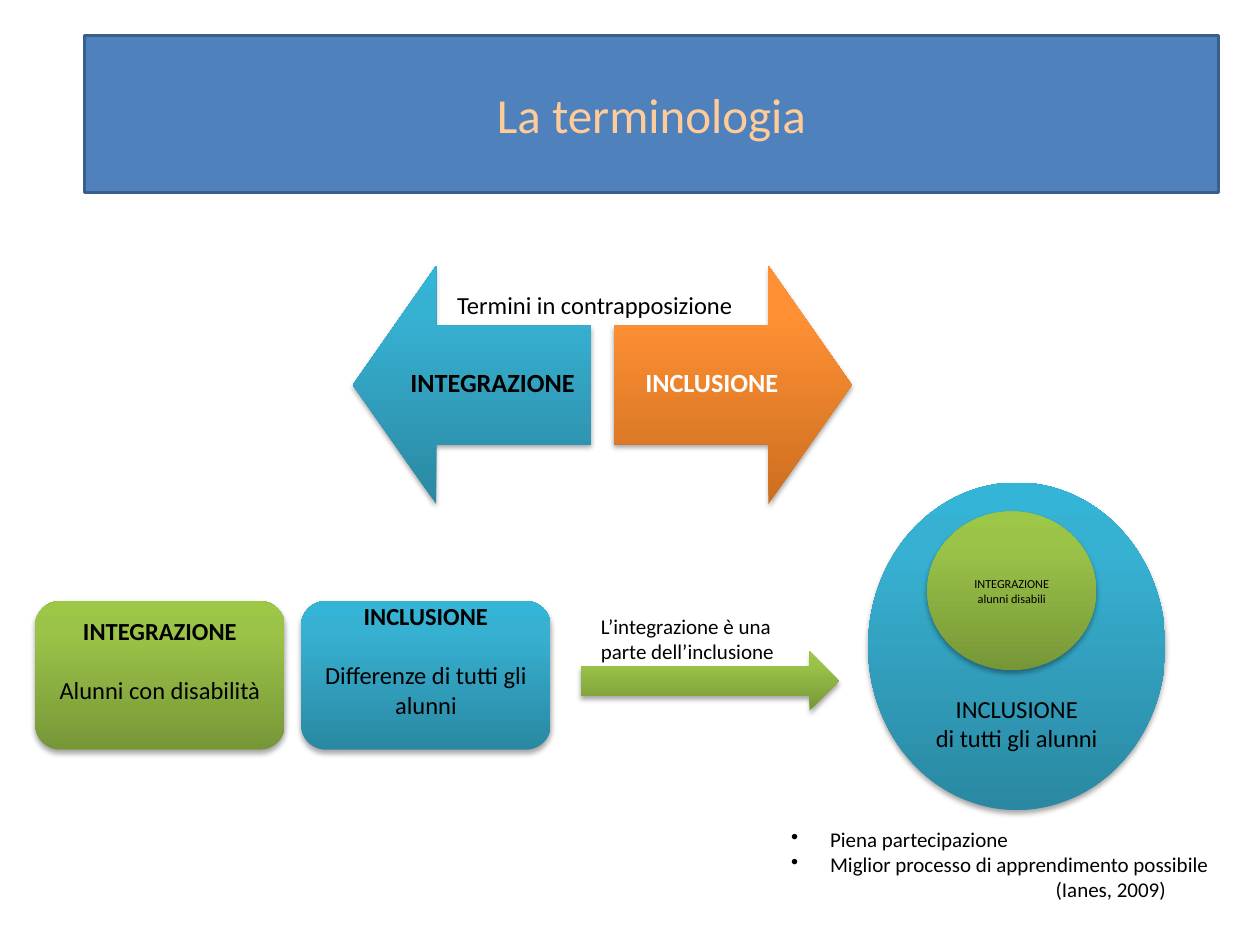
import pptx
import pptx.dml.color
import pptx.enum.shapes
import pptx.enum.text
import pptx.oxml
import pptx.oxml.ns
import pptx.util

Inches, Pt = pptx.util.Inches, pptx.util.Pt
RGBColor = pptx.dml.color.RGBColor
SHAPE = pptx.enum.shapes.MSO_SHAPE
ANCHOR = pptx.enum.text.MSO_ANCHOR
LEFT, CENTER = pptx.enum.text.PP_ALIGN.LEFT, pptx.enum.text.PP_ALIGN.CENTER
qn = pptx.oxml.ns.qn

FONT = "Calibri"
BLACK = RGBColor(0x00, 0x00, 0x00)
WHITE = RGBColor(0xFF, 0xFF, 0xFF)
PEACH = RGBColor(0xFF, 0xCC, 0x99)
BLUE = RGBColor(0x4F, 0x81, 0xBD)
NAVY = RGBColor(0x3A, 0x5F, 0x8C)

# Gradient colours at 0, 80 and 100 percent, from bottom to top
STOPS = (0, 80, 100)
TEAL = [RGBColor.from_string(c) for c in ("2A88A2", "37B1D2", "34B4D6")]
ORANGE = [RGBColor.from_string(c) for c in ("CC6E20", "FF9034", "FF9136")]
GREEN = [RGBColor.from_string(c) for c in ("779737", "9BC348", "9DC746")]

# Content
TITLE = "La terminologia"
OPPOSITION = "Termini in contrapposizione"
OPPOSED = [  # arrow, left, label left, label, gradient, label colour
    (SHAPE.LEFT_ARROW, 2.8, 3.13, "INTEGRAZIONE", TEAL, BLACK),
    (SHAPE.RIGHT_ARROW, 4.87, 4.87, "INCLUSIONE", ORANGE, WHITE),
]
TARGETS = [
    ("INTEGRAZIONE", "Alunni con disabilità", GREEN),
    ("INCLUSIONE", "Differenze di tutti gli alunni", TEAL),
]
PART_OF = ["L’integrazione è una", "parte dell’inclusione"]
WHOLE = ["INCLUSIONE", "di tutti gli alunni"]
PART = ["INTEGRAZIONE alunni disabili"]
GOALS = ["Piena partecipazione", "Miglior processo di apprendimento possibile"]
CITATION = "(Ianes, 2009)"

prs = pptx.Presentation()
prs.slide_width, prs.slide_height = Inches(10), Inches(7.5)
slide = prs.slides.add_slide(prs.slide_layouts[6])


def write(holder, lines, size, color=BLACK, align=LEFT, bold=False):
    frame = holder.text_frame
    frame.word_wrap = True
    frame.text = "\n".join(lines)
    for paragraph in frame.paragraphs:
        paragraph.alignment = align
        font = paragraph.font
        font.name, font.size, font.bold = FONT, Pt(size), bold
        font.color.rgb = color
    return frame


def add_label(box, lines, size, **style):
    label = slide.shapes.add_textbox(*map(Inches, box))
    return write(label, lines, size, **style)


def add_glossy(kind, box, colors):
    """Add a shape with a vertical gradient and a soft shadow below it."""
    shape = slide.shapes.add_shape(kind, *map(Inches, box))
    shape.line.fill.background()
    shape.fill.gradient()
    shape.fill.gradient_angle = 90
    stop_list = shape.element.spPr.find(".//" + qn("a:gsLst"))
    for stop in list(stop_list):
        stop_list.remove(stop)
    for position, color in zip(STOPS, colors):
        stop_list.append(pptx.oxml.parse_xml(
            f'<a:gs {pptx.oxml.ns.nsdecls("a")} pos="{position * 1000}">'
            f'<a:srgbClr val="{color}"/></a:gs>'))
    shape.shadow.inherit = False
    shape.element.spPr.find(qn("a:effectLst")).append(pptx.oxml.parse_xml(
        f'<a:outerShdw {pptx.oxml.ns.nsdecls("a")} blurRad="{Pt(3.1)}" '
        f'dist="{Pt(1.8)}" dir="5400000" rotWithShape="0">'
        '<a:srgbClr val="000000"><a:alpha val="35000"/></a:srgbClr></a:outerShdw>'))
    shape.text_frame.vertical_anchor = ANCHOR.MIDDLE
    return shape


def indent(paragraph, left, first=0, bullet=None):
    properties = paragraph._p.get_or_add_pPr()
    properties.set("marL", str(Inches(left)))
    properties.set("indent", str(Inches(first)))
    if bullet:
        properties.insert(0, pptx.oxml.parse_xml(
            f'<a:buChar {pptx.oxml.ns.nsdecls("a")} char="{bullet}"/>'))


# Title banner
banner = slide.shapes.add_shape(SHAPE.RECTANGLE, *map(Inches, (0.67, 0.28, 9, 1.25)))
banner.shadow.inherit = False
banner.fill.solid()
banner.fill.fore_color.rgb = BLUE
banner.line.color.rgb = NAVY
banner.line.width = Pt(2)
write(banner, [TITLE], 28, PEACH, CENTER).vertical_anchor = ANCHOR.MIDDLE

# Opposed terms: two arrows pointing apart
for kind, left, label_left, term, colors, text_color in OPPOSED:
    arrow = add_glossy(kind, (left, 2.11, 1.89, 1.89), colors)
    arrow.adjustments[0], arrow.adjustments[1] = 0.5, 0.35
    term_frame = add_label((label_left, 2.58, 1.56, 0.94), [term], 15,
                           color=text_color, align=CENTER, bold=True)
    term_frame.vertical_anchor = ANCHOR.MIDDLE
    term_frame.margin_left = term_frame.margin_right = Inches(0.12)
    term_frame.paragraphs[0].line_spacing = 0.9

# Captions
add_label((4.67, 4.82, 1.75, 0.51), PART_OF, 12)
add_label((3.53, 2.25, 2.57, 0.34), [OPPOSITION], 14)

# Whom each term addresses
for index, (term, audience, colors) in enumerate(TARGETS):
    card = add_glossy(SHAPE.ROUNDED_RECTANGLE,
                      (0.28 + 2.11 * index, 4.77, 1.98, 1.18), colors)
    card_frame = write(card, [term, audience], 14, align=CENTER)
    card_frame.paragraphs[0].font.bold = True
    card_frame.paragraphs[1].space_before = Pt(17)
    card_frame.margin_top, card_frame.margin_bottom = 0, Inches(0.24)

# Integration as a part of inclusion
add_glossy(SHAPE.RIGHT_ARROW, (4.61, 5.17, 2.05, 0.47), GREEN)
whole = add_glossy(SHAPE.OVAL, (6.89, 3.83, 2.36, 2.6), TEAL)
write(whole, WHOLE, 14, align=CENTER).margin_top = Inches(1.27)
part = add_glossy(SHAPE.OVAL, (7.36, 4.06, 1.34, 1.26), GREEN)
write(part, PART, 7, align=CENTER)

# Goals and citation
goals_frame = add_label((6.18, 6.51, 3.84, 0.71), GOALS + [CITATION], 12)
*goals, citation = goals_frame.paragraphs
for goal in goals:
    indent(goal, 0.31, -0.31, "•")
indent(citation, 2.1)

prs.save("out.pptx")
